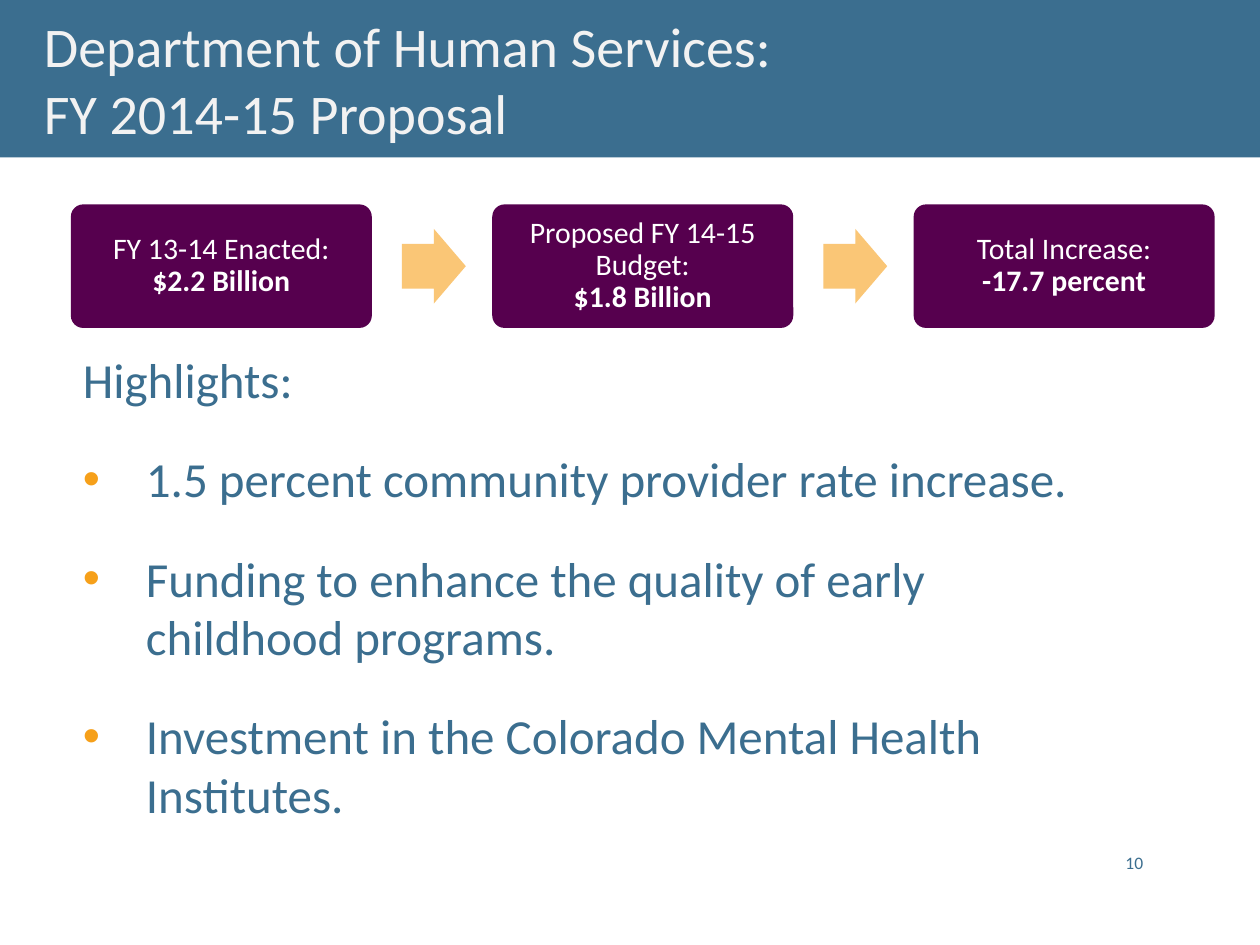
from lxml import etree
from pptx import Presentation
from pptx.dml.color import RGBColor
from pptx.enum.shapes import MSO_SHAPE
from pptx.enum.text import MSO_ANCHOR, PP_ALIGN
from pptx.oxml.ns import qn
from pptx.util import Pt

RECTANGLE = MSO_SHAPE.RECTANGLE
ROUNDED = MSO_SHAPE.ROUNDED_RECTANGLE
ARROW = MSO_SHAPE.RIGHT_ARROW
MIDDLE, BOTTOM = MSO_ANCHOR.MIDDLE, MSO_ANCHOR.BOTTOM
CENTER, RIGHT = PP_ALIGN.CENTER, PP_ALIGN.RIGHT

COLORS = {
    "blue": "3B6E8F",
    "purple": "56004E",
    "peach": "FAC676",
    "orange": "F6A01A",
    "title": "F2F2F2",
    "white": "FFFFFF",
}

deck = Presentation()
deck.slide_width, deck.slide_height = Pt(720), Pt(540)
page = deck.slides.add_slide(deck.slide_layouts[6])


def add_block(kind, left, top, width, height, color):
    block = page.shapes.add_shape(kind, Pt(left), Pt(top), Pt(width), Pt(height))
    block.shadow.inherit = False
    block.fill.solid()
    block.fill.fore_color.rgb = RGBColor.from_string(COLORS[color])
    block.line.fill.background()
    return block


def add_span(para, text, size, color, bold=False):
    span = para.add_run()
    span.text = text
    span.font.name = "Calibri"
    span.font.size = Pt(size)
    span.font.bold = bold
    span.font.color.rgb = RGBColor.from_string(COLORS[color])


# Title band
add_block(RECTANGLE, 0, 0, 720, 90, "blue")
title = page.shapes.add_textbox(Pt(18), Pt(2.9), Pt(666), Pt(85))
title.text_frame.word_wrap = True
para = title.text_frame.paragraphs[0]
add_span(para, "Department of Human Services:", 32, "title")
para.add_line_break()
add_span(para, "FY 2014-15 Proposal", 32, "title")

# Budget cards, with an arrow between neighbours
cards = [
    ("FY 13-14 Enacted:", "$2.2 Billion"),
    ("Proposed FY 14-15 Budget:", "$1.8 Billion"),
    ("Total Increase:", "-17.7 percent"),
]
CARD_LEFT, CARD_PITCH = 40.5, 240.8
for index, (label, amount) in enumerate(cards):
    left = CARD_LEFT + index * CARD_PITCH
    card = add_block(ROUNDED, left, 116.8, 172, 70.6, "purple")
    card.adjustments[0] = 0.1
    frame = card.text_frame
    frame.word_wrap = True
    frame.vertical_anchor = MIDDLE
    para = frame.paragraphs[0]
    para.alignment = CENTER
    para.line_spacing = 0.9
    add_span(para, label, 17, "white")
    para.add_line_break()
    add_span(para, amount, 17, "white", bold=True)
    if index < len(cards) - 1:
        arrow = add_block(ARROW, left + 189.2, 130.8, 36.5, 42.7, "peach")
        arrow.adjustments[0] = 0.6

# Highlights
highlights = page.shapes.add_textbox(Pt(40.3), Pt(196.4), Pt(591), Pt(364))
frame = highlights.text_frame
frame.word_wrap = True
para = frame.paragraphs[0]
para.space_after = Pt(18)
add_span(para, "Highlights:", 28, "blue")
for item in [
    "1.5 percent community provider rate increase.",
    "Funding to enhance the quality of early childhood programs.",
    "Investment in the Colorado Mental Health Institutes.",
]:
    para = frame.add_paragraph()
    para.space_before, para.space_after = Pt(5), Pt(18)
    properties = para._p.get_or_add_pPr()
    properties.set("marL", str(Pt(36)))
    properties.set("indent", str(Pt(-36)))
    bullet_color = etree.SubElement(properties, qn("a:buClr"))
    etree.SubElement(bullet_color, qn("a:srgbClr"), val=COLORS["orange"])
    etree.SubElement(properties, qn("a:buFont"), typeface="Arial")
    etree.SubElement(properties, qn("a:buChar"), char="•")
    add_span(para, item, 28, "blue")

# Page number
number = page.shapes.add_textbox(Pt(631.5), Pt(473.8), Pt(28.8), Pt(28.8))
number.text_frame.word_wrap = True
number.text_frame.vertical_anchor = BOTTOM
para = number.text_frame.paragraphs[0]
para.alignment = RIGHT
add_span(para, "10", 10, "blue")

deck.save("out.pptx")
